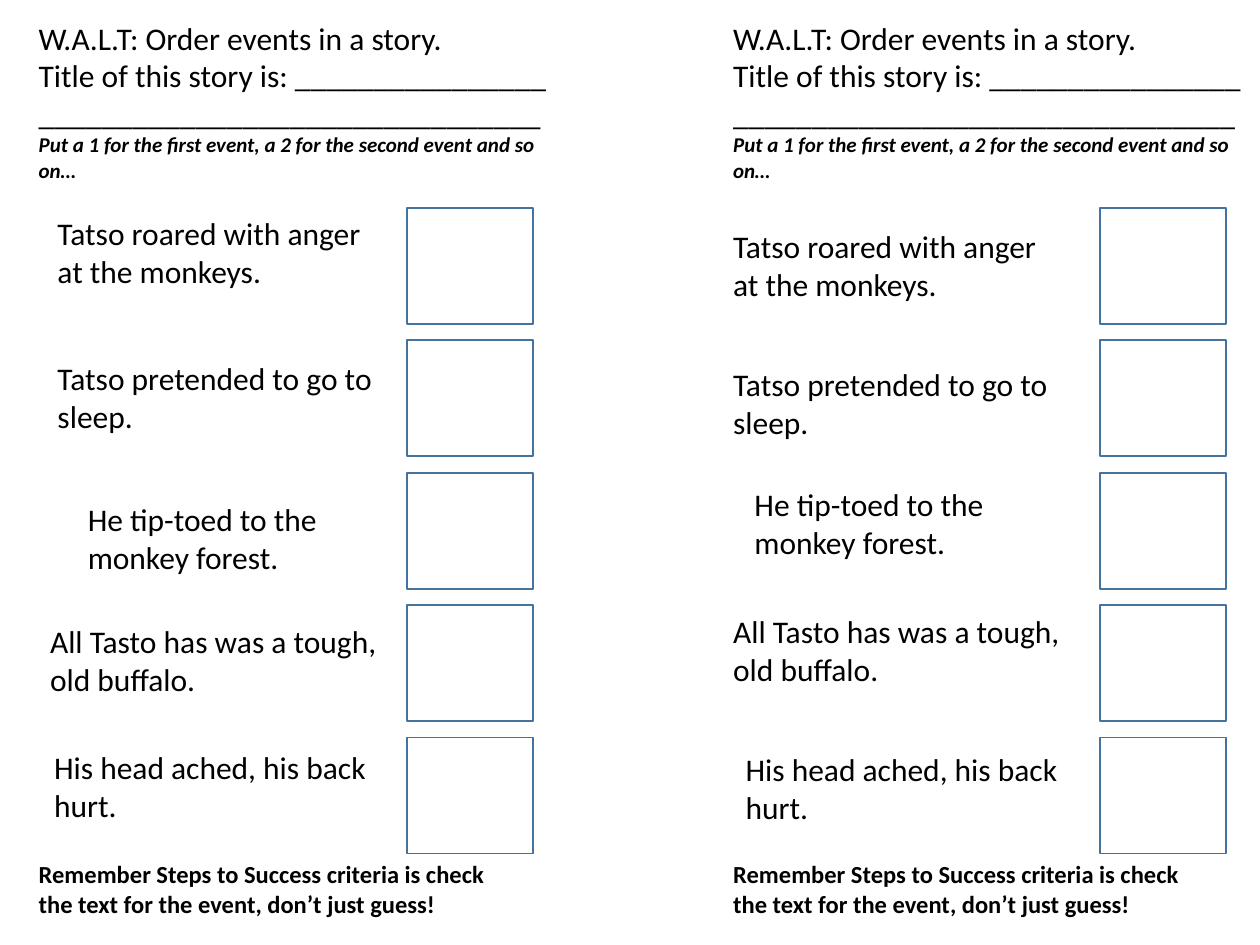
from dataclasses import dataclass

from pptx import Presentation
from pptx.dml.color import RGBColor
from pptx.enum.shapes import MSO_SHAPE
from pptx.enum.text import MSO_AUTO_SIZE
from pptx.util import Cm, Pt


@dataclass(frozen=True)
class Theme:
    font: str = "Calibri"
    ink: RGBColor = RGBColor(0x00, 0x00, 0x00)
    box_line: RGBColor = RGBColor(0x43, 0x73, 0x9E)
    body: int = 18
    reminder: int = 14
    instruction: int = 12


THEME = Theme()

HEADING = [
    "W.A.L.T: Order events in a story.",
    "Title of this story is: " + "_" * 16,
    "_" * 32,
]
INSTRUCTION = "Put a 1 for the first event, a 2 for the second event and so on…"
REMINDER = ("Remember Steps to Success criteria is check the text "
            "for the event, don’t just guess!")

# Each event: wording and text width in cm
EVENTS = [
    ("Tatso roared with anger at the monkeys.", 6.99),
    ("Tatso pretended to go to sleep.", 6.99),
    ("He tip-toed to the monkey forest.", 7.24),
    ("All Tasto has was a tough, old buffalo.", 7.11),
    ("His head ached, his back hurt.", 7.11),
]

# Each worksheet, in cm: left edge, answer box left, (left, top) of each event
WORKSHEETS = [
    (0.53, 8.2, [(0.91, 4.19), (0.91, 7.11), (1.52, 9.96),
                 (0.76, 12.42), (0.84, 14.96)]),
    (14.53, 22.17, [(14.53, 4.45), (14.53, 7.24), (14.96, 9.65),
                    (14.53, 12.22), (14.78, 14.99)]),
]

BOX_TOP, BOX_PITCH = 4.19, 2.67
BOX_WIDTH, BOX_HEIGHT = 2.54, 2.34


def add_text(slide, left, top, width, height, lines, size, bold=False):
    """Add a wrapped text box, one paragraph per line, and return its paragraphs."""
    label = slide.shapes.add_textbox(Cm(left), Cm(top), Cm(width), Cm(height))
    frame = label.text_frame
    frame.word_wrap = True
    frame.auto_size = MSO_AUTO_SIZE.SHAPE_TO_FIT_TEXT
    frame.text = "\n".join(lines)
    for paragraph in frame.paragraphs:
        for run in paragraph.runs:
            run.font.name = THEME.font
            run.font.size = Pt(size)
            run.font.bold = bold
            run.font.color.rgb = THEME.ink
    return frame.paragraphs


def add_heading(slide, left):
    paragraphs = add_text(slide, left, 0.25, 10.87, 3.58,
                          HEADING + [INSTRUCTION], THEME.body)
    instruction = paragraphs[-1].runs[0].font
    instruction.size = Pt(THEME.instruction)
    instruction.bold = instruction.italic = True


def add_answer_box(slide, left, top):
    answer = slide.shapes.add_shape(MSO_SHAPE.RECTANGLE, Cm(left), Cm(top),
                                    Cm(BOX_WIDTH), Cm(BOX_HEIGHT))
    answer.shadow.inherit = False
    answer.fill.background()
    answer.line.color.rgb = THEME.box_line
    answer.line.width = Pt(1)


def add_worksheet(slide, left, box_left, event_places):
    add_heading(slide, left)

    # Events with the box for their number
    for row, ((event, width), (x, y)) in enumerate(zip(EVENTS, event_places)):
        add_answer_box(slide, box_left, BOX_TOP + row * BOX_PITCH)
        add_text(slide, x, y, width, 1.8, [event], THEME.body)

    # Closing reminder
    add_text(slide, left, 17.2, 9.91, 1.45, [REMINDER], THEME.reminder, bold=True)


def main():
    deck = Presentation()
    deck.slide_width, deck.slide_height = Cm(25.4), Cm(19.05)
    slide = deck.slides.add_slide(deck.slide_layouts[6])

    # Two worksheets side by side
    for left, box_left, event_places in WORKSHEETS:
        add_worksheet(slide, left, box_left, event_places)

    deck.save("out.pptx")


if __name__ == "__main__":
    main()
